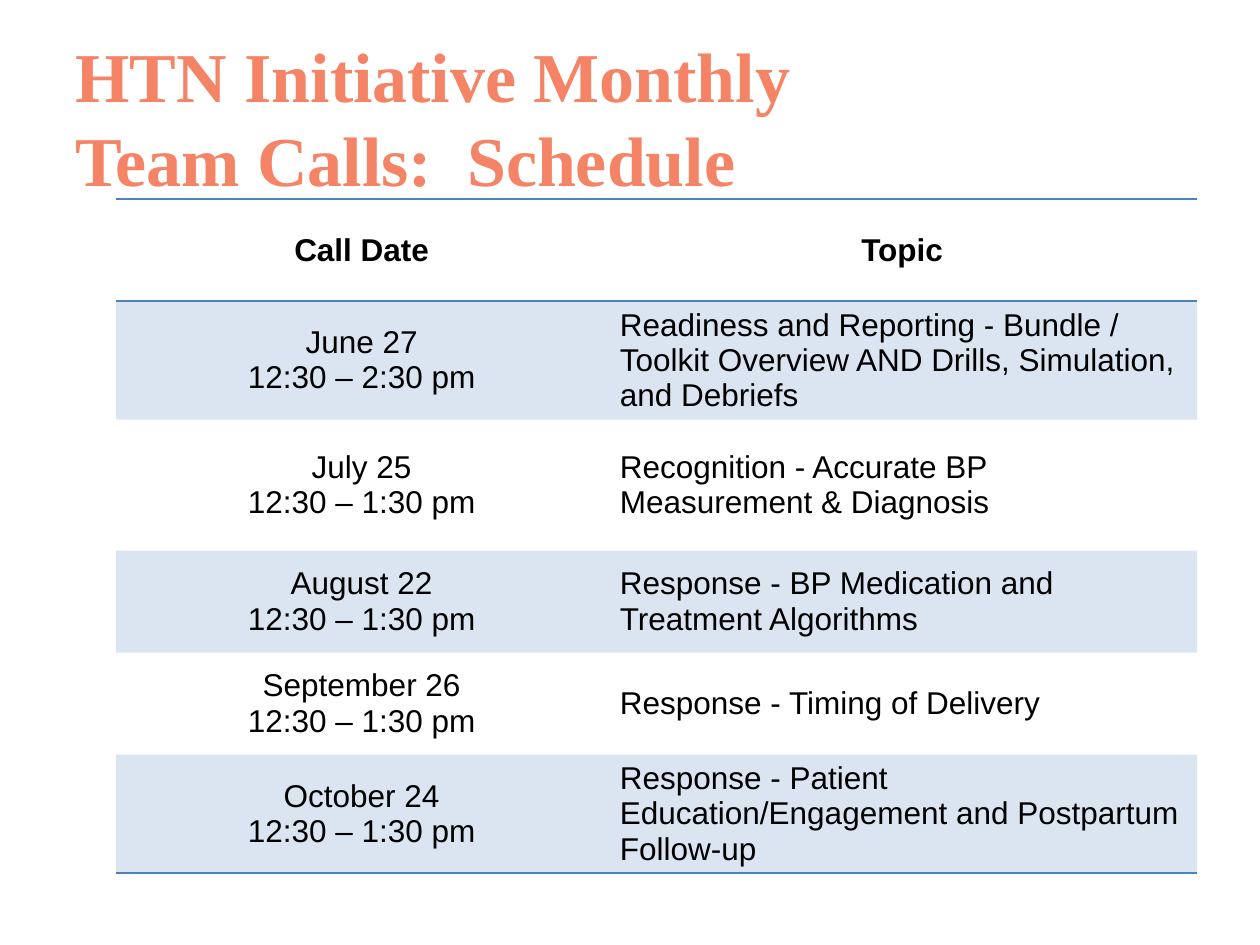
from dataclasses import dataclass
from lxml.etree import SubElement as Sub
from pptx import Presentation
from pptx.dml.color import RGBColor as RGB
from pptx.enum.text import MSO_ANCHOR as Anchor, PP_ALIGN as Align
from pptx.oxml.ns import qn
from pptx.util import Inches, Pt


@dataclass(frozen=True)
class Theme:
    head: str = "Times New Roman"
    body: str = "Arial"
    coral: str = "F58466"
    ink: str = "000000"
    blue: str = "4F81BD"
    tint: int = 20  # percent opacity of the shaded rows
    big: int = 40
    text: int = 18
    rule: int = 1
    grid: str = "{2D5ABB26-0587-4C30-8999-92F81FD0307C}"  # no style, no grid


class Deck:
    def __init__(self, theme):
        self.theme = theme
        self.prs = Presentation()
        self.prs.slide_width, self.prs.slide_height = Inches(10), Inches(7.5)
        self.slide = self.prs.slides.add_slide(self.prs.slide_layouts[5])

    def style(self, frame, align, color, **form):
        """Align each paragraph and format each run."""
        frame.word_wrap = True
        for para in frame.paragraphs:
            para.alignment = align
            for run in para.runs:
                run.font.color.rgb = RGB.from_string(color)
                for key, val in form.items():
                    setattr(run.font, key, val)

    def title(self, text, box):
        t = self.theme
        shape = self.slide.shapes.title
        for key, val in zip(("left", "top", "width", "height"), box):
            setattr(shape, key, Inches(val))
        frame = shape.text_frame
        frame.text = text
        frame.vertical_anchor = Anchor.MIDDLE
        self.style(frame, Align.LEFT, t.coral,
                   name=t.head, size=Pt(t.big), bold=True)

    def edge(self, cell, side):
        """Rule one side of a cell."""
        line = Sub(cell._tc.get_or_add_tcPr(), qn(f"a:ln{side}"),
                   w=str(Pt(self.theme.rule)))
        fill = Sub(line, qn("a:solidFill"))
        Sub(fill, qn("a:srgbClr"), val=self.theme.blue)

    def shade(self, cell):
        """Give a cell the see-through tint."""
        cell.fill.solid()
        cell.fill.fore_color.rgb = RGB.from_string(self.theme.blue)
        color = cell._tc.tcPr.find(".//" + qn("a:solidFill") + "[last()]/" + qn("a:srgbClr"))
        for fill in cell._tc.tcPr.findall(qn("a:solidFill")):
            color = fill.find(qn("a:srgbClr"))
        Sub(color, qn("a:alpha"), val=str(self.theme.tint * 1000))

    def table(self, rows, left, top, cols, highs):
        t = self.theme
        shape = self.slide.shapes.add_table(
            len(rows), len(cols), Inches(left), Inches(top),
            Inches(sum(cols)), Inches(sum(highs)))
        table = shape.table
        table._tbl.tblPr.find(qn("a:tableStyleId")).text = t.grid
        for col, wide in zip(table.columns, cols):
            col.width = Inches(wide)
        for row, high in zip(table.rows, highs):
            row.height = Inches(high)

        last = len(rows) - 1
        for r, row in enumerate(rows):
            for c, text in enumerate(row):
                cell = table.cell(r, c)
                cell.text = text
                cell.vertical_anchor = Anchor.MIDDLE
                mid = r == 0 or c == 0
                self.style(cell.text_frame, Align.CENTER if mid else Align.LEFT,
                           t.ink, name=t.body, size=Pt(t.text), bold=r == 0)
                # Rules frame the header and close the table
                if r == 0:
                    self.edge(cell, "T")
                if r in (0, last):
                    self.edge(cell, "B")
                # Odd rows are shaded
                if r % 2:
                    self.shade(cell)
                else:
                    cell.fill.background()

    def save(self):
        self.prs.save("out.pptx")


CALLS = [
    ("Call Date", "Topic"),
    ("June 27\n12:30 – 2:30 pm",
     "Readiness and Reporting - Bundle / Toolkit Overview AND Drills, "
     "Simulation, and Debriefs"),
    ("July 25\n12:30 – 1:30 pm",
     "Recognition - Accurate BP Measurement & Diagnosis"),
    ("August 22\n12:30 – 1:30 pm",
     "Response - BP Medication and Treatment Algorithms"),
    ("September 26\n12:30 – 1:30 pm", "Response - Timing of Delivery"),
    ("October 24\n12:30 – 1:30 pm",
     "Response - Patient Education/Engagement and Postpartum Follow-up"),
]


def main():
    deck = Deck(Theme())
    # Heading
    deck.title("HTN Initiative Monthly \vTeam Calls:  Schedule",
               (0.5, 0.3, 9, 1.25))
    # Schedule of calls
    deck.table(CALLS, 0.92, 1.58, (3.9, 4.68),
               (0.81, 0.81, 1.04, 0.81, 0.81, 0.81))
    deck.save()


if __name__ == "__main__":
    main()
